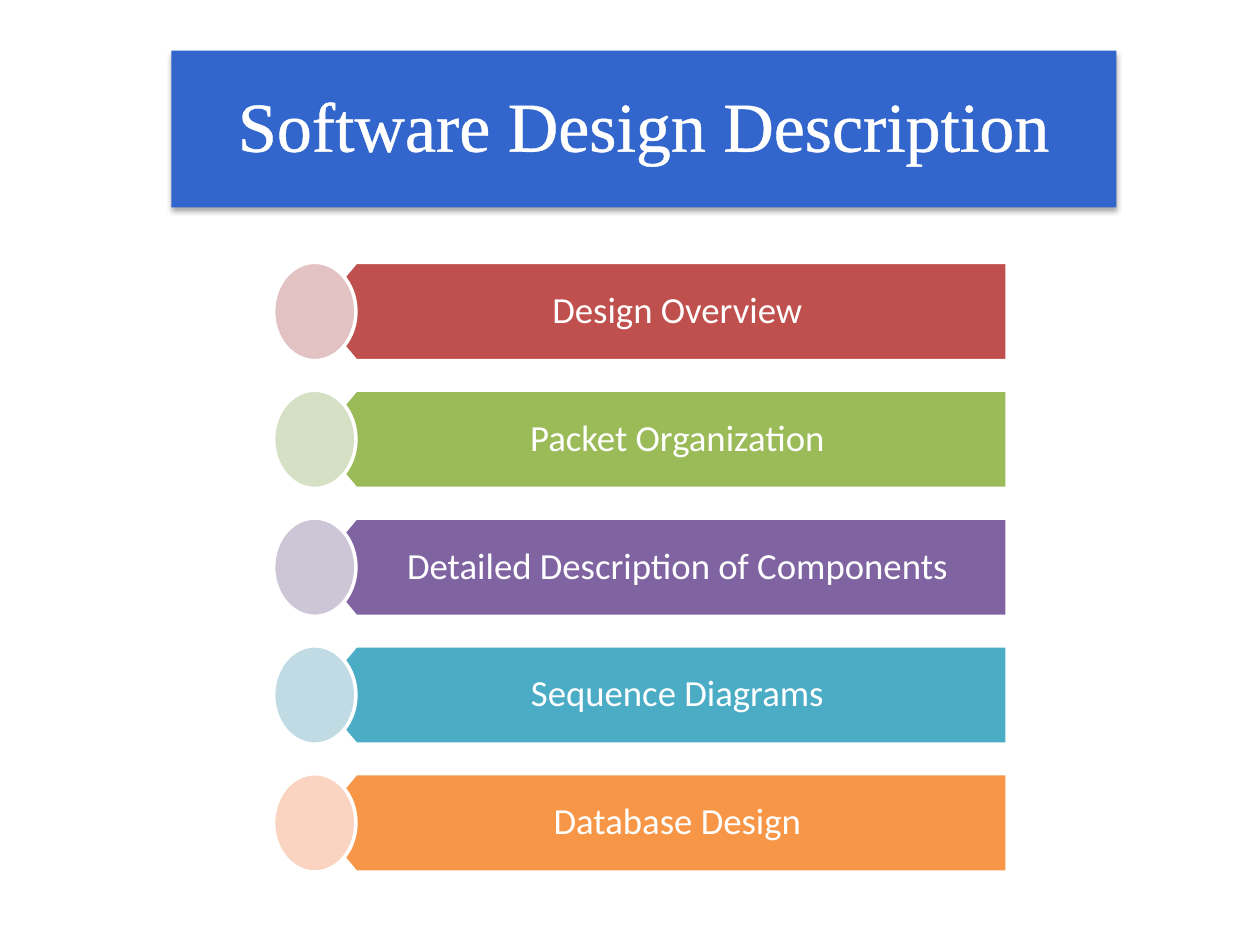
from lxml import etree
from pptx import Presentation
from pptx import oxml
from pptx.dml.color import RGBColor
from pptx.enum import shapes as es, text as et
from pptx.oxml import ns
from pptx.util import Pt

WHITE = RGBColor(0xFF, 0xFF, 0xFF)
BLUE = RGBColor(0x33, 0x66, 0xCC)
ROWS = [
    ("Design Overview", RGBColor(0xC0, 0x50, 0x4D), RGBColor(0xE2, 0xC2, 0xC2)),
    ("Packet Organization", RGBColor(0x9B, 0xBB, 0x59), RGBColor(0xD5, 0xE0, 0xC4)),
    ("Detailed Description of Components", RGBColor(0x80, 0x64, 0xA2), RGBColor(0xCD, 0xC6, 0xD7)),
    ("Sequence Diagrams", RGBColor(0x4B, 0xAC, 0xC6), RGBColor(0xC1, 0xDB, 0xE5)),
    ("Database Design", RGBColor(0xF7, 0x96, 0x46), RGBColor(0xFB, 0xD3, 0xC1)),
]


def node(xml):
    return oxml.parse_xml(xml.replace(">", f" {ns.nsdecls('a')}>", 1))


def write(shape, words, font, size):
    frame = shape.text_frame
    frame.word_wrap = True
    frame.auto_size = et.MSO_AUTO_SIZE.NONE
    frame.vertical_anchor = et.MSO_ANCHOR.MIDDLE
    para = frame.paragraphs[0]
    para.alignment = et.PP_ALIGN.CENTER
    para.line_spacing = 0.9
    run = para.add_run()
    run.text = words
    run.font.name = font
    run.font.size = Pt(size)
    run.font.color.rgb = WHITE
    return run


def paint(shape, fill):
    shape.shadow.inherit = False
    shape.fill.solid()
    shape.fill.fore_color.rgb = fill
    shape.line.color.rgb = WHITE
    shape.line.width = Pt(2)


def banner(title, left, top, width, height):
    title.left, title.top = Pt(left), Pt(top)
    title.width, title.height = Pt(width), Pt(height)
    props = title._element.spPr
    props.append(node('<a:prstGeom prst="roundRect"><a:avLst/></a:prstGeom>'))
    title.fill.solid()
    title.fill.fore_color.rgb = BLUE
    title.line.fill.background()
    props.append(node(
        '<a:effectLst><a:outerShdw blurRad="39370" dist="22860" dir="5400000" rotWithShape="0">'
        '<a:srgbClr val="000000"><a:alpha val="35000"/></a:srgbClr>'
        '</a:outerShdw></a:effectLst>'))
    run = write(title, "Software Design Description", "Times New Roman", 40)
    edge = node('<a:ln w="18415"><a:solidFill/></a:ln>')
    etree.SubElement(edge[0], ns.qn("a:srgbClr"), val=str(WHITE))
    run.font._element.insert(0, edge)


def row(parts, left, top, width, height, words, fill, tint):
    oval = 47
    tip, neck, right = left + oval / 2, left + oval, left + width
    mid, base = top + height / 2, top + height
    pen = parts.build_freeform(Pt(right), Pt(base))
    pen.add_line_segments(
        [(Pt(x), Pt(y)) for x, y in [(neck, base), (tip, mid), (neck, top), (right, top)]])
    bar = pen.convert_to_shape()
    paint(bar, fill)
    frame = bar.text_frame
    frame.margin_left, frame.margin_right = Pt(30.2), Pt(11.5)
    frame.margin_top = frame.margin_bottom = Pt(6.5)
    write(bar, words, "Calibri", 21)
    dot = parts.add_shape(es.MSO_SHAPE.OVAL, Pt(left), Pt(top), Pt(oval), Pt(height))
    paint(dot, tint)


def stack(slide, left, top, width, height):
    parts = slide.shapes.add_group_shape().shapes
    tall = 56.2
    step = (height - tall) / (len(ROWS) - 1)
    for i, (words, fill, tint) in enumerate(ROWS):
        row(parts, left, top + i * step, width, tall, words, fill, tint)


def main():
    deck = Presentation()
    deck.slide_width, deck.slide_height = Pt(720), Pt(540)
    slide = deck.slides.add_slide(deck.slide_layouts[5])
    slide.background.fill.solid()
    slide.background.fill.fore_color.rgb = WHITE
    banner(slide.shapes.title, 97.9, 29, 540, 89.5)
    stack(slide, 156.4, 149.9, 419.2, 348.4)
    deck.save("out.pptx")


if __name__ == "__main__":
    main()
